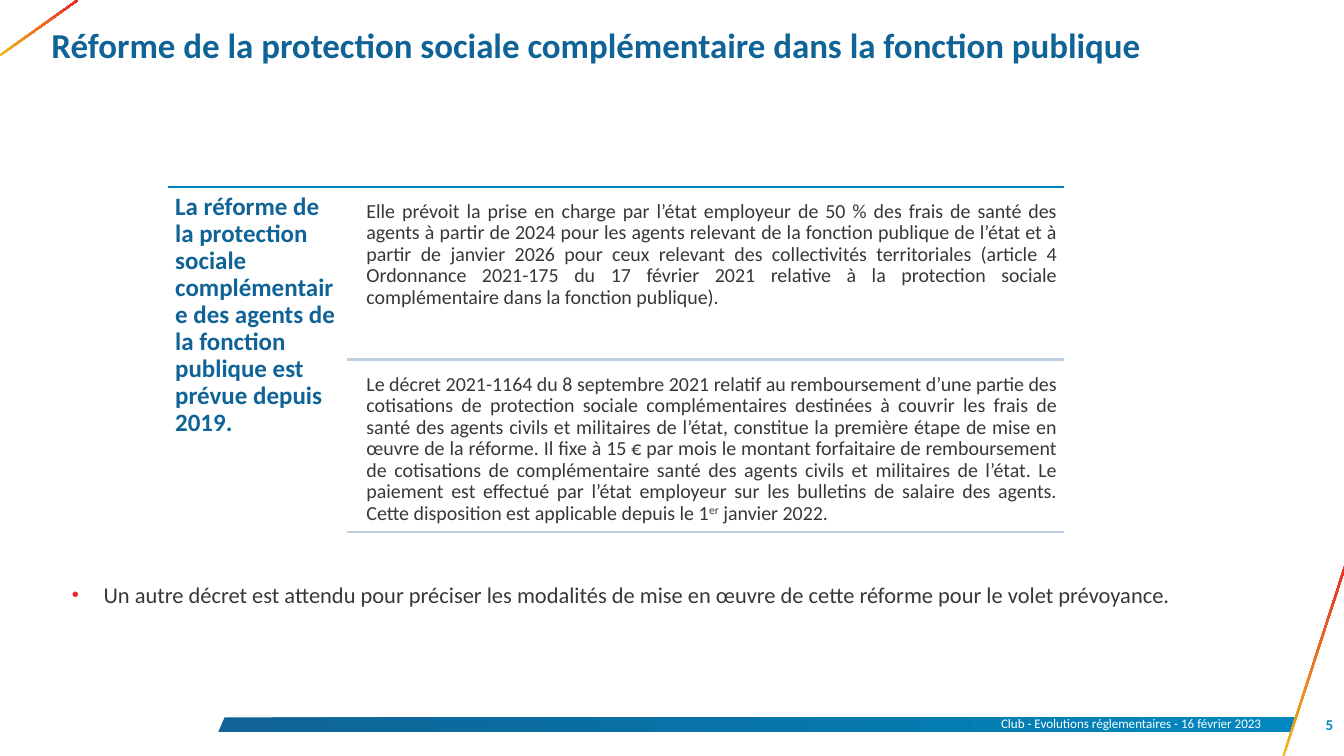
from lxml import etree
from pptx import Presentation
from pptx.dml.color import RGBColor
from pptx.enum.shapes import MSO_CONNECTOR, MSO_SHAPE
from pptx.enum.text import MSO_ANCHOR, PP_ALIGN
from pptx.oxml.ns import qn
from pptx.util import Pt

LEFT, RIGHT, JUSTIFY = PP_ALIGN.LEFT, PP_ALIGN.RIGHT, PP_ALIGN.JUSTIFY
TOP, MIDDLE = MSO_ANCHOR.TOP, MSO_ANCHOR.MIDDLE
RECTANGLE = MSO_SHAPE.RECTANGLE
STRAIGHT = MSO_CONNECTOR.STRAIGHT

COLORS = {
    "navy": "0F6396", "blue": "0087BD", "pale": "BDCFE1", "text": "35383B",
    "yellow": "F2B818", "red": "E62930", "white": "FFFFFF",
}
FONT = "Calibri"

TITLE = "Réforme de la protection sociale complémentaire dans la fonction publique"
SUMMARY = (
    "La réforme de la protection sociale complémentaire des agents "
    "de la fonction publique est prévue depuis 2019."
)
# Each detail is a list of (text, is superscript)
DETAILS = [
    [(
        "Elle prévoit la prise en charge par l’état employeur de 50 % des frais de santé "
        "des agents à partir de 2024 pour les agents relevant de la fonction publique de "
        "l’état et à partir de janvier 2026 pour ceux relevant des collectivités "
        "territoriales (article 4 Ordonnance 2021-175 du 17 février 2021 relative à la "
        "protection sociale complémentaire dans la fonction publique).", False,
    )],
    [(
        "Le décret 2021-1164 du 8 septembre 2021 relatif au remboursement d’une partie des "
        "cotisations de protection sociale complémentaires destinées à couvrir les frais de "
        "santé des agents civils et militaires de l’état, constitue la première étape de "
        "mise en œuvre de la réforme. Il fixe à 15 € par mois le montant forfaitaire de "
        "remboursement de cotisations de complémentaire santé des agents civils et "
        "militaires de l’état. Le paiement est effectué par l’état employeur sur les "
        "bulletins de salaire des agents. Cette disposition est applicable depuis le 1", False,
    ), ("er", True), (" janvier 2022.", False)],
]
NEXT_STEP = (
    "Un autre décret est attendu pour préciser les modalités de mise en œuvre "
    "de cette réforme pour le volet prévoyance."
)
FOOTER = "Club - Evolutions réglementaires - 16 février 2023"
PAGE_NUMBER = "5"

# Left, top, width, height, rotation
ACCENT_BARS = [(970.6, 526.3, 167, 1.5, 288), (-7.2, 21.6, 76.3, 1.5, 324.6)]
FOOTER_BAND = [(180, 574.6), (1039, 574.6), (1034.6, 586.1), (175, 586.1)]

TABLE_LEFT, TABLE_RIGHT, TABLE_TOP = 134.6, 852.5, 149.6
SUMMARY_WIDTH, ROW_HEIGHT = 143.3, 138.3
DETAIL_INDENT, DETAIL_DROP = 10.8, 6.5

presentation = Presentation()
presentation.slide_width, presentation.slide_height = Pt(1077.12), Pt(605.52)
slide = presentation.slides.add_slide(presentation.slide_layouts[6])
shapes = slide.shapes


def rgb(name):
    return RGBColor.from_string(COLORS[name])


def paint_gradient(shape, start, end):
    shape.shadow.inherit = False
    shape.line.fill.background()
    shape.fill.gradient()
    shape.fill.gradient_angle = 0
    for stop, name in zip(shape.fill.gradient_stops, (start, end)):
        stop.color.rgb = rgb(name)


def add_bullet(paragraph, color, margin, indent):
    properties = paragraph._p.get_or_add_pPr()
    properties.set("marL", str(Pt(margin)))
    properties.set("indent", str(Pt(indent)))
    bullet_color = etree.SubElement(properties, qn("a:buClr"))
    etree.SubElement(bullet_color, qn("a:srgbClr"), val=COLORS[color])
    etree.SubElement(properties, qn("a:buSzPct"), val="90000")
    etree.SubElement(properties, qn("a:buFont"), typeface="Arial")
    etree.SubElement(properties, qn("a:buChar"), char="•")


def add_text(content, box, size, color="text", bold=False, align=LEFT, anchor=TOP,
             insets=(3, 3), spacing=None, bullet=False):
    """Write a string, or a list of (text, is superscript), in a text box."""
    frame = shapes.add_textbox(*map(Pt, box)).text_frame
    frame.word_wrap = True
    frame.vertical_anchor = anchor
    frame.margin_left = frame.margin_right = Pt(insets[0])
    frame.margin_top = frame.margin_bottom = Pt(insets[1])
    paragraph = frame.paragraphs[0]
    paragraph.alignment = align
    if spacing:
        paragraph.line_spacing = spacing
    if bullet:
        add_bullet(paragraph, "red", 32.5, -25.3)
    for text, superscript in [(content, False)] if isinstance(content, str) else content:
        run = paragraph.add_run()
        run.text = text
        run.font.name, run.font.size, run.font.bold = FONT, Pt(size), bold
        run.font.color.rgb = rgb(color)
        if superscript:
            run._r.get_or_add_rPr().set("baseline", "30000")


def add_rule(left, y, color):
    rule = shapes.add_connector(STRAIGHT, Pt(left), Pt(y), Pt(TABLE_RIGHT), Pt(y))
    rule.line.color.rgb = rgb(color)
    rule.line.width = Pt(2)
    etree.SubElement(rule._element.spPr, qn("a:effectLst"))


corners = [(Pt(x), Pt(y)) for x, y in FOOTER_BAND]
builder = shapes.build_freeform(*corners[0])
builder.add_line_segments(corners[1:], close=True)
paint_gradient(builder.convert_to_shape(), "navy", "blue")

for *box, rotation in ACCENT_BARS:
    bar = shapes.add_shape(RECTANGLE, *map(Pt, box))
    bar.rotation = rotation
    paint_gradient(bar, "yellow", "red")

add_text(TITLE, (38.2, 15.8, 1000.8, 64.8), 28, "navy", bold=True)

add_rule(TABLE_LEFT, TABLE_TOP, "blue")
add_text(SUMMARY, (TABLE_LEFT, TABLE_TOP, SUMMARY_WIDTH, 283), 20, "navy", bold=True,
         insets=(5.8, 5.8), spacing=0.9)
column_left = TABLE_LEFT + SUMMARY_WIDTH
detail_left = column_left + DETAIL_INDENT
for row, detail in enumerate(DETAILS):
    row_top = TABLE_TOP + row * ROW_HEIGHT
    box = (detail_left, row_top + DETAIL_DROP, TABLE_RIGHT - detail_left, ROW_HEIGHT - DETAIL_DROP)
    add_text(detail, box, 16, align=JUSTIFY, insets=(5, 5), spacing=0.9)
    add_rule(column_left, row_top + ROW_HEIGHT, "pale")

add_text(NEXT_STEP, (47.5, 462.5, 1000.8, 30), 18, bullet=True)
add_text(FOOTER, (224.6, 569.5, 793.4, 19.4), 10.5, "white", align=RIGHT, anchor=MIDDLE,
         insets=(7.2, 3.6))
add_text(PAGE_NUMBER, (1027.4, 571.7, 41, 16.6), 12, "blue", bold=True, align=RIGHT,
         anchor=MIDDLE, insets=(0, 0))

presentation.save("out.pptx")
